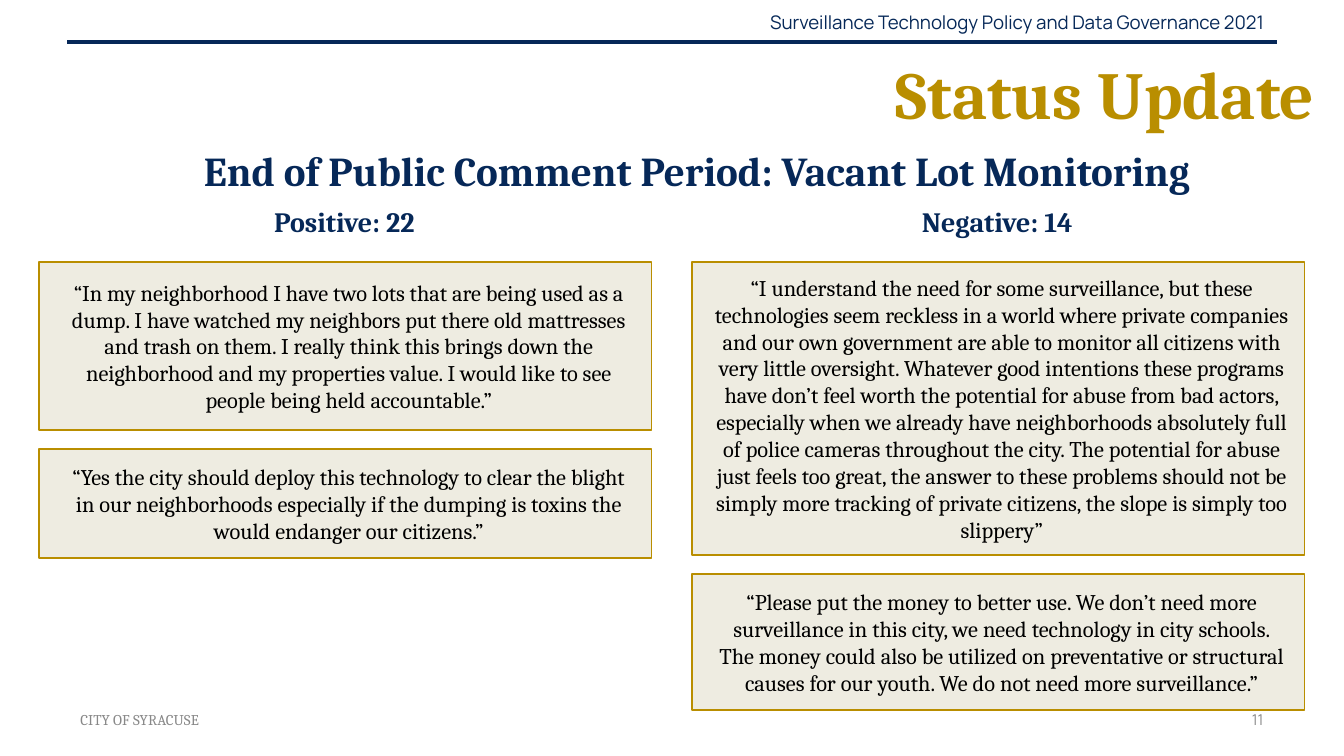
from typing import NamedTuple

from lxml import etree
from pptx import Presentation
from pptx.dml.color import RGBColor
from pptx.enum.shapes import MSO_CONNECTOR, MSO_SHAPE
from pptx.enum.text import MSO_ANCHOR, PP_ALIGN
from pptx.oxml.ns import qn
from pptx.util import Cm, Pt

LEFT, MID, RIGHT = PP_ALIGN.LEFT, PP_ALIGN.CENTER, PP_ALIGN.RIGHT
TOP, MIDDLE = MSO_ANCHOR.TOP, MSO_ANCHOR.MIDDLE
RECT, LINE = MSO_SHAPE.RECTANGLE, MSO_CONNECTOR.STRAIGHT
SERIF, SANS = "Cambria", "Manrope"
HEX = {"navy": "062858", "gold": "B98E00", "cream": "EEECE1",
       "grey": "888888", "black": "000000"}

CARD_TOP, CARD_W, GAP = 4.95, 11.58, 0.36


class Box(NamedTuple):
    left: float
    top: float
    width: float
    height: float


class Style(NamedTuple):
    size: float
    color: str
    align: PP_ALIGN
    font: str = SERIF
    bold: bool = False
    anchor: MSO_ANCHOR = TOP
    pads: tuple = (0.25, 0.13, 0.25, 0.13)


class Label(NamedTuple):
    text: str
    box: Box
    style: Style


class Quote(NamedTuple):
    text: str
    height: float


class Column(NamedTuple):
    left: float
    head: str
    quotes: list


TITLE = Style(36, "gold", RIGHT, bold=True, pads=(0.25, 0.22, 0.25, 0.13))
HEAD = Style(15, "navy", MID, bold=True, pads=(0.25, 0.25, 0.25, 0.25))
BODY = Style(12, "black", MID, anchor=MIDDLE, pads=(0.41, 0, 0.28, 0))

LABELS = [
    Label("Surveillance Technology Policy and Data Governance 2021",
          Box(13.23, 0.03, 10.9, 0.76),
          Style(10, "navy", RIGHT, SANS, anchor=MIDDLE)),
    Label("11", Box(18.21, 13.23, 5.92, 0.76),
          Style(8, "grey", RIGHT, SANS, anchor=MIDDLE)),
    Label("CITY OF SYRACUSE", Box(1.27, 13.23, 5.92, 0.76),
          Style(8, "grey", LEFT, anchor=MIDDLE)),
    Label("End of Public Comment Period: Vacant Lot Monitoring",
          Box(3.15, 2.62, 20.04, 1.27),
          Style(22, "navy", MID, bold=True)),
]

COLUMNS = [
    Column(0.74, "Positive: 22", [
        Quote("“In my neighborhood I have two lots that are being used as a "
              "dump. I have watched my neighbors put there old mattresses and "
              "trash on them. I really think this brings down the "
              "neighborhood and my properties value. I would like to see "
              "people being held accountable.”", 3.18),
        Quote("“Yes the city should deploy this technology to clear the "
              "blight in our neighborhoods especially if the dumping is "
              "toxins the would endanger our citizens.”", 2.06),
    ]),
    Column(13.08, "Negative: 14", [
        Quote("“I understand the need for some surveillance, but these "
              "technologies seem reckless in a world where private companies "
              "and our own government are able to monitor all citizens with "
              "very little oversight. Whatever good intentions these programs "
              "have don’t feel worth the potential for abuse from bad actors, "
              "especially when we already have neighborhoods absolutely full "
              "of police cameras throughout the city. The potential for abuse "
              "just feels too great, the answer to these problems should not "
              "be simply more tracking of private citizens, the slope is "
              "simply too slippery”", 5.54),
        Quote("“Please put the money to better use. We don’t need more "
              "surveillance in this city, we need technology in city schools. "
              "The money could also be utilized on preventative or structural "
              "causes for our youth. We do not need more surveillance.”",
              2.57),
    ]),
]


def rgb(name: str) -> RGBColor:
    return RGBColor.from_string(HEX[name])


def place(shape, box: Box) -> None:
    shape.left, shape.top, shape.width, shape.height = map(Cm, box)


def write(shape, text: str, style: Style) -> None:
    frame = shape.text_frame
    frame.text = text
    frame.word_wrap = True
    frame.vertical_anchor = style.anchor
    (frame.margin_left, frame.margin_top,
     frame.margin_right, frame.margin_bottom) = map(Cm, style.pads)
    para = frame.paragraphs[0]
    para.alignment = style.align
    for run in para.runs:
        run.font.name = style.font
        run.font.size = Pt(style.size)
        run.font.bold = style.bold
        run.font.color.rgb = rgb(style.color)


def add_label(slide, label: Label) -> None:
    shape = slide.shapes.add_textbox(*map(Cm, label.box))
    write(shape, label.text, label.style)


def add_card(slide, quote: Quote, left: float, top: float) -> None:
    box = Box(left, top, CARD_W, quote.height)
    card = slide.shapes.add_shape(RECT, *map(Cm, box))
    card.shadow.inherit = False
    card.fill.solid()
    card.fill.fore_color.rgb = rgb("cream")
    card.line.color.rgb = rgb("gold")
    card.line.width = Pt(0.75)
    write(card, quote.text, BODY)


def add_column(slide, col: Column) -> None:
    """Draw the heading, then stack the quotes with equal gaps."""
    add_label(slide, Label(col.head, Box(col.left + 1.45, 3.61, 8.64, 10.24),
                           HEAD))
    top = CARD_TOP
    for quote in col.quotes:
        add_card(slide, quote, col.left, top)
        top += quote.height + GAP


def add_rule(slide) -> None:
    rule = slide.shapes.add_connector(LINE, Cm(1.27), Cm(0.79),
                                      Cm(24.13), Cm(0.79))
    rule.line.color.rgb = rgb("navy")
    rule.line.width = Pt(2.25)
    etree.SubElement(rule.line._get_or_add_ln().getparent(),
                     qn("a:effectLst"))


def main() -> None:
    deck = Presentation()
    deck.slide_width, deck.slide_height = Cm(25.4), Cm(14.29)
    slide = deck.slides.add_slide(deck.slide_layouts[5])
    title = slide.shapes.title
    place(title, Box(9.14, 0.76, 15.95, 3.4))
    write(title, "Status Update", TITLE)
    add_rule(slide)
    for label in LABELS:
        add_label(slide, label)
    for col in COLUMNS:
        add_column(slide, col)
    deck.save("out.pptx")


if __name__ == "__main__":
    main()
